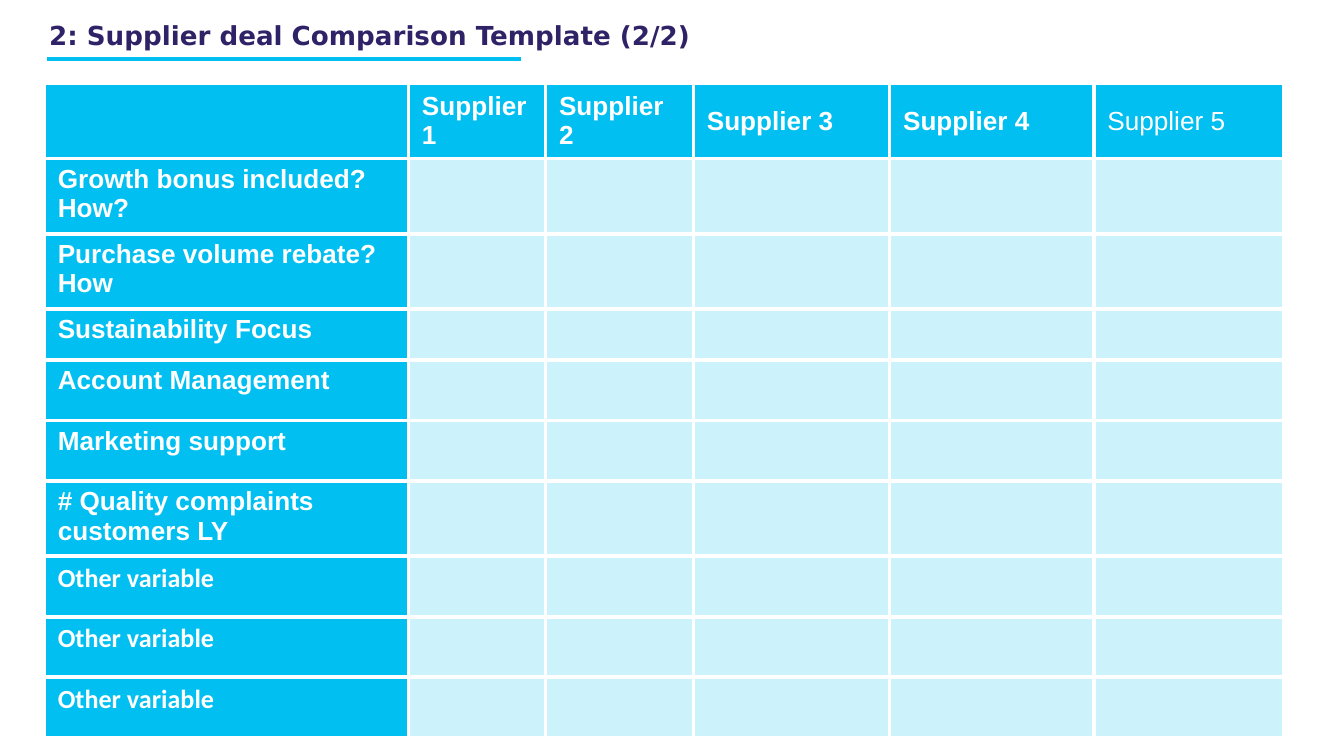
from dataclasses import dataclass

from lxml.etree import SubElement
from pptx import Presentation
from pptx.dml.color import RGBColor
from pptx.enum.shapes import MSO_CONNECTOR
from pptx.enum.text import MSO_ANCHOR, MSO_AUTO_SIZE
from pptx.oxml.ns import qn
from pptx.util import Inches, Pt


@dataclass(frozen=True)
class Theme:
    accent: str = "01BFF0"
    pale: str = "CCF2FC"
    title: str = "2F2267"
    white: str = "FFFFFF"
    title_font: str = "DejaVu Sans"
    body_font: str = "Arial"
    other_font: str = "Calibri"
    text_size: int = 14
    rule_width: float = 2
    border_width: float = 2.25


COLUMN_WIDTHS = [2.71, 1.02, 1.1, 1.46, 1.52, 1.41]
SUPPLIERS = [f"Supplier {number}" for number in range(1, 6)]
CRITERIA = [
    ("Growth bonus included? How?", 0.56),
    ("Purchase volume rebate? How", 0.56),
    ("Sustainability Focus", 0.38),
    ("Account Management", 0.45),
    ("Marketing support", 0.45),
    ("# Quality complaints customers LY", 0.56),
] + [("Other variable", 0.45)] * 3
HEADER_HEIGHT = 0.56


class SlideBuilder:
    def __init__(self, slide, theme):
        self.slide = slide
        self.theme = theme

    def style(self, paragraph, font_name, color, bold=True):
        for run in paragraph.runs:
            run.font.name = font_name
            run.font.size = Pt(self.theme.text_size)
            run.font.bold = bold
            run.font.color.rgb = RGBColor.from_string(color)

    def title(self, text, left, top, width, height):
        box = self.slide.shapes.add_textbox(
            Inches(left), Inches(top), Inches(width), Inches(height))
        frame = box.text_frame
        frame.word_wrap = True
        frame.auto_size = MSO_AUTO_SIZE.SHAPE_TO_FIT_TEXT
        frame.margin_left = frame.margin_right = Pt(5.4)
        frame.margin_top = frame.margin_bottom = Pt(2.7)
        frame.text = text
        self.style(frame.paragraphs[0], self.theme.title_font, self.theme.title)

    def rule(self, left, right, top):
        line = self.slide.shapes.add_connector(
            MSO_CONNECTOR.STRAIGHT,
            Inches(left), Inches(top), Inches(right), Inches(top))
        line.line.color.rgb = RGBColor.from_string(self.theme.accent)
        line.line.width = Pt(self.theme.rule_width)
        SubElement(line._element.spPr, qn("a:effectLst"))

    def table(self, left, top, column_widths, row_heights):
        table = self.slide.shapes.add_table(
            len(row_heights), len(column_widths), Inches(left), Inches(top),
            Inches(sum(column_widths)), Inches(sum(row_heights))).table
        table.first_row = table.horz_banding = False
        for column, width in zip(table.columns, column_widths):
            column.width = Inches(width)
        for row, height in zip(table.rows, row_heights):
            row.height = Inches(height)
        return table

    def cell(self, cell, fill, text="", font_name=None, bold=True,
             anchor=MSO_ANCHOR.TOP):
        properties = cell._tc.get_or_add_tcPr()
        for side in ("L", "R", "T", "B"):
            border = SubElement(properties, qn(f"a:ln{side}"),
                                w=str(Pt(self.theme.border_width)))
            solid = SubElement(border, qn("a:solidFill"))
            SubElement(solid, qn("a:srgbClr"), val=self.theme.white)
        cell.fill.solid()
        cell.fill.fore_color.rgb = RGBColor.from_string(fill)
        cell.vertical_anchor = anchor
        cell.margin_top = cell.margin_bottom = Pt(3.25)
        paragraph = cell.text_frame.paragraphs[0]
        if text:
            paragraph.text = text
            self.style(paragraph, font_name, self.theme.white, bold)
        else:
            SubElement(paragraph._p, qn("a:endParaRPr"),
                       sz=str(self.theme.text_size * 100))


def main():
    presentation = Presentation()
    presentation.slide_width = Inches(10)
    presentation.slide_height = presentation.slide_width * 9 // 16
    slide = presentation.slides.add_slide(presentation.slide_layouts[6])
    theme = Theme()
    builder = SlideBuilder(slide, theme)

    builder.title("2: Supplier deal Comparison Template (2/2)", 0.29, 0.11, 6.29, 0.31)
    builder.rule(0.35, 3.88, 0.44)

    row_heights = [HEADER_HEIGHT] + [height for _, height in CRITERIA]
    table = builder.table(0.33, 0.62, COLUMN_WIDTHS, row_heights)

    builder.cell(table.cell(0, 0), theme.accent)
    for column, supplier in enumerate(SUPPLIERS, start=1):
        builder.cell(table.cell(0, column), theme.accent, supplier, theme.body_font,
                     bold=supplier != SUPPLIERS[-1], anchor=MSO_ANCHOR.MIDDLE)
    for row, (criterion, _) in enumerate(CRITERIA, start=1):
        is_other = criterion == "Other variable"
        font_name = theme.other_font if is_other else theme.body_font
        builder.cell(table.cell(row, 0), theme.accent, criterion, font_name)
        for column in range(1, len(COLUMN_WIDTHS)):
            builder.cell(table.cell(row, column), theme.pale)

    presentation.save("out.pptx")


if __name__ == "__main__":
    main()
